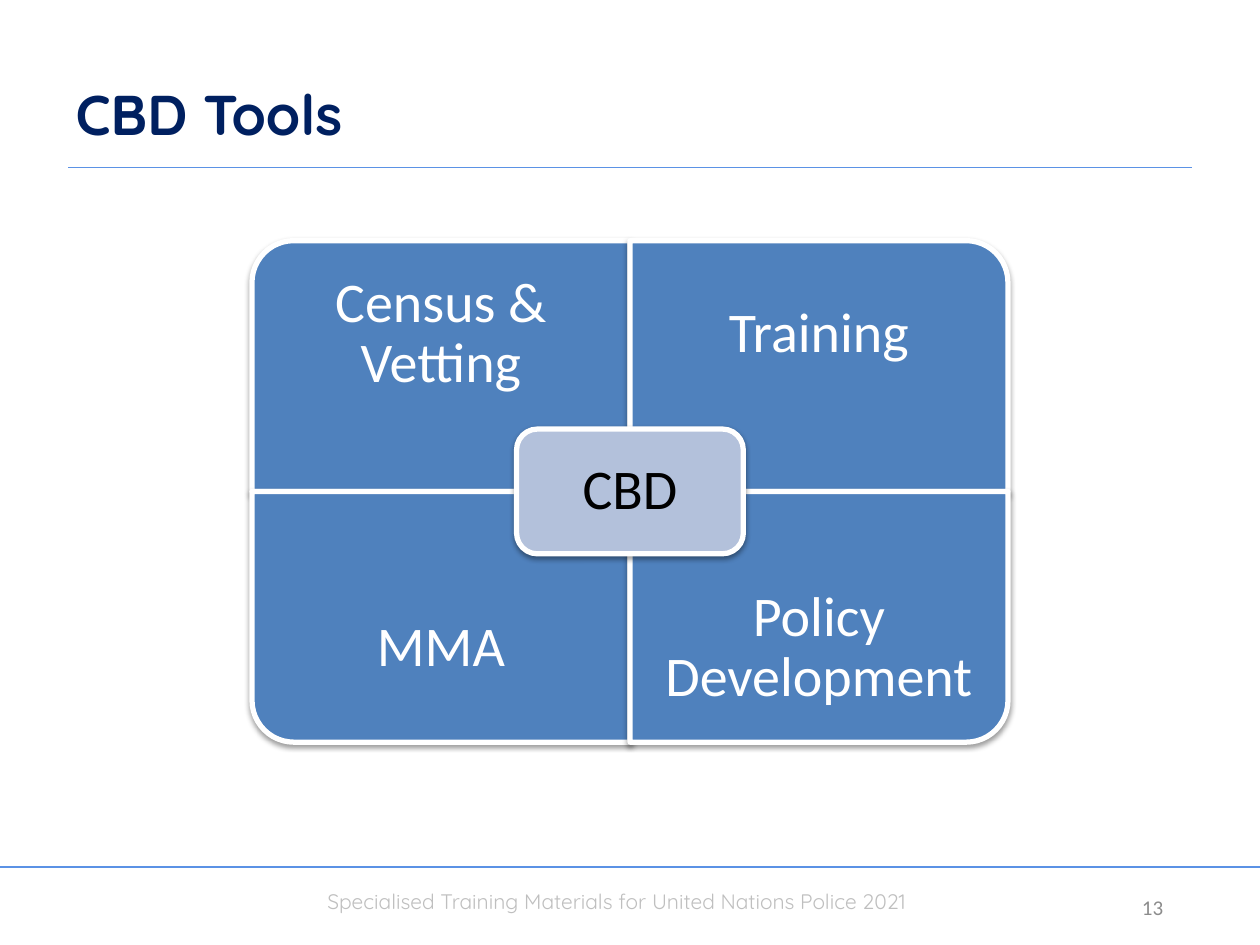
from dataclasses import dataclass

from lxml.etree import SubElement
from pptx import Presentation
from pptx.dml.color import RGBColor
from pptx.enum.shapes import MSO_CONNECTOR as Connector, MSO_SHAPE as Shape
from pptx.enum.text import MSO_ANCHOR as Anchor, PP_ALIGN as Align
from pptx.oxml.ns import qn
from pptx.util import Inches, Pt

WHITE = "FFFFFF"
RULE = "5B92E5"
CENTER_X, CENTER_Y = 5, 3.9
TILE_WIDTH, TILE_HEIGHT = 3, 1.99
LABEL_HEIGHT = 1.49


@dataclass
class Tile:
    label: str
    column: int
    row: int
    rotation: int


@dataclass
class Style:
    size: int
    font: str
    color: str
    bold: bool = False
    align: Align = Align.LEFT
    anchor: Anchor = Anchor.TOP
    spacing: float = 1.0


TILES = [
    Tile("Census & Vetting", 0, 0, 270),
    Tile("Training", 1, 0, 0),
    Tile("MMA", 0, 1, 180),
    Tile("Policy Development", 1, 1, 90),
]


def rgb(color: str) -> RGBColor:
    return RGBColor.from_string(color)


def write(box, text: str, style: Style) -> None:
    frame = box.text_frame
    frame.text = text
    frame.word_wrap = True
    frame.vertical_anchor = style.anchor
    para = frame.paragraphs[0]
    para.alignment = style.align
    para.line_spacing = style.spacing
    font = para.runs[0].font
    font.size = Pt(style.size)
    font.name = style.font
    font.bold = style.bold
    font.color.rgb = rgb(style.color)


def add_text(page, left: float, top: float, width: float, height: float,
             text: str, style: Style, inset: float = 0) -> None:
    box = page.shapes.add_textbox(Inches(left), Inches(top), Inches(width), Inches(height))
    write(box, text, style)
    if inset:
        frame = box.text_frame
        frame.margin_left = frame.margin_right = Inches(inset)
        frame.margin_top = frame.margin_bottom = Inches(inset)


def add_rule(page, left: float, right: float, y: float) -> None:
    rule = page.shapes.add_connector(
        Connector.STRAIGHT, Inches(left), Inches(y), Inches(right), Inches(y))
    rule.line.color.rgb = rgb(RULE)
    rule.line.width = Pt(0.75)
    SubElement(rule._element.spPr, qn("a:effectLst"))


def add_panel(page, kind: Shape, center_x: float, center_y: float,
              width: float, height: float, fill: str, rotation: int = 0) -> None:
    if rotation % 180:
        width, height = height, width
    panel = page.shapes.add_shape(
        kind, Inches(center_x - width / 2), Inches(center_y - height / 2),
        Inches(width), Inches(height))
    panel.rotation = rotation
    panel.fill.solid()
    panel.fill.fore_color.rgb = rgb(fill)
    panel.line.color.rgb = rgb(WHITE)
    panel.line.width = Pt(3)
    panel.shadow.inherit = False
    effects = panel._element.spPr.find(qn("a:effectLst"))
    shadow = SubElement(effects, qn("a:outerShdw"), blurRad=str(Pt(3.1)),
                        dist=str(Pt(1.6)), dir="5400000", rotWithShape="0")
    tint = SubElement(shadow, qn("a:srgbClr"), val="000000")
    SubElement(tint, qn("a:alpha"), val="38000")


def label_style(color: str) -> Style:
    return Style(32, "Calibri", color, align=Align.CENTER, anchor=Anchor.MIDDLE, spacing=0.9)


def add_tile(page, tile: Tile) -> None:
    left = CENTER_X + (tile.column - 1) * TILE_WIDTH
    top = CENTER_Y + (tile.row - 1) * TILE_HEIGHT
    add_panel(page, Shape.ROUND_1_RECTANGLE, left + TILE_WIDTH / 2, top + TILE_HEIGHT / 2,
              TILE_WIDTH, TILE_HEIGHT, "4F81BD", tile.rotation)
    label_top = top + tile.row * (TILE_HEIGHT - LABEL_HEIGHT)
    add_text(page, left, label_top, TILE_WIDTH, LABEL_HEIGHT,
             tile.label, label_style(WHITE), 0.25)


def main() -> None:
    deck = Presentation()
    deck.slide_width, deck.slide_height = Inches(10), Inches(7.5)
    page = deck.slides.add_slide(deck.slide_layouts[5])

    add_rule(page, 0, 10, 6.88)
    add_text(page, 2.5, 7, 5, 0.3,
             "Specialised Training Materials for United Nations Police 2021",
             Style(12, "Quicksand", "BFBFBF"))
    add_rule(page, 0.54, 9.46, 1.33)

    title = page.shapes.title
    title.left, title.top = Inches(0.5), Inches(0.58)
    title.width, title.height = Inches(9), Inches(0.74)
    write(title, "CBD Tools", Style(32, "Quicksand", "002060", bold=True))

    add_text(page, 8.08, 7, 1.25, 0.4, "13",
             Style(12, "Calibri", "8C8C8C", align=Align.RIGHT, anchor=Anchor.MIDDLE))

    for tile in TILES:
        add_tile(page, tile)
    add_panel(page, Shape.ROUNDED_RECTANGLE, CENTER_X, CENTER_Y, 1.8, 0.99, "B3C1DB")
    add_text(page, 4.15, 3.45, 1.7, 0.9, "CBD", label_style("000000"), 0.13)

    deck.save("out.pptx")


if __name__ == "__main__":
    main()
